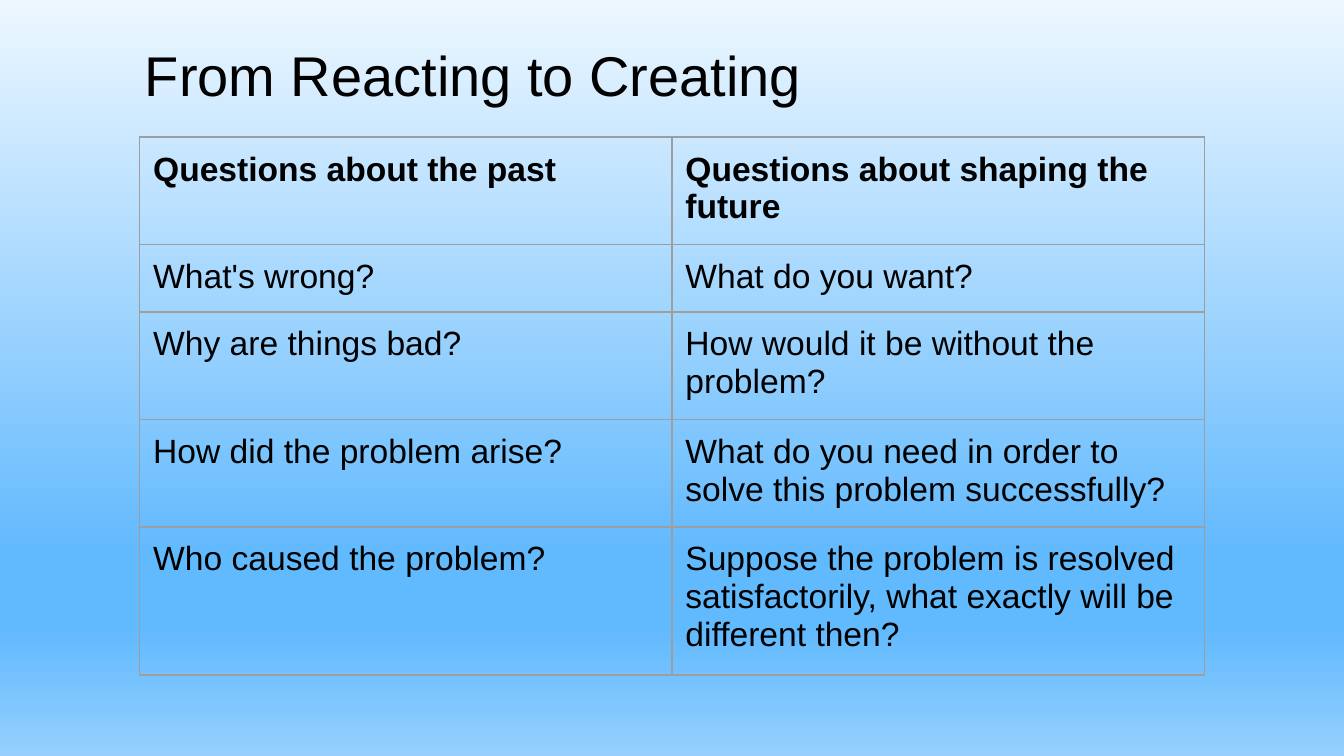
from copy import deepcopy

from lxml import etree
from pptx import Presentation
from pptx.dml.color import RGBColor
from pptx.enum.text import MSO_ANCHOR
from pptx.oxml.ns import qn
from pptx.util import Inches, Pt

TOP = MSO_ANCHOR.TOP
FONT = "Arial"
COLORS = {"text": "000000", "border": "9E9E9E",
          "pale": "EDF7FF", "sky": "61B9FE", "light": "95D0FE"}
BACKGROUND_STOPS = [(0, "pale"), (0.74, "sky"), (0.83, "sky"), (1, "light")]
INSET = Inches(0.1)
BORDER_WIDTH = Pt(0.75)
ROW_HEIGHT = Inches(0.42)  # minimum; rows grow with their text
# Past question, future question
QUESTIONS = [
    ("Questions about the past", "Questions about shaping the future"),
    ("What's wrong?", "What do you want?"),
    ("Why are things bad?", "How would it be without the problem?"),
    ("How did the problem arise?",
     "What do you need in order to solve this problem successfully?"),
    ("Who caused the problem?",
     "Suppose the problem is resolved satisfactorily, "
     "what exactly will be different then?"),
]


def rgb(name):
    return RGBColor.from_string(COLORS[name])


def set_font(paragraph, size, bold=False):
    font = paragraph.font
    font.name, font.size, font.bold = FONT, Pt(size), bold
    font.color.rgb = rgb("text")


def set_margins(box):
    box.margin_left = box.margin_right = INSET
    box.margin_top = box.margin_bottom = INSET


def paint_background(slide):
    fill = slide.background.fill
    fill.gradient()
    fill.gradient_angle = 270
    # A new gradient has two stops; add the missing ones
    stop_list = next(slide.element.iter(qn("a:gsLst")))
    while len(stop_list) < len(BACKGROUND_STOPS):
        stop_list.append(deepcopy(stop_list[0]))
    for stop, (position, color) in zip(fill.gradient_stops, BACKGROUND_STOPS):
        stop.position = position
        stop.color.rgb = rgb(color)


def add_title(slide, text, left, top, width, height):
    title = slide.shapes.add_textbox(
        Inches(left), Inches(top), Inches(width), Inches(height))
    frame = title.text_frame
    frame.word_wrap = True
    frame.vertical_anchor = TOP
    set_margins(frame)
    paragraph = frame.paragraphs[0]
    paragraph.text = text
    paragraph.line_spacing = 1.15
    set_font(paragraph, 30)


def add_borders(cell):
    properties = cell._tc.get_or_add_tcPr()
    for index, side in enumerate(("lnL", "lnR", "lnT", "lnB")):
        line = etree.Element(qn(f"a:{side}"), w=str(BORDER_WIDTH))
        fill = etree.SubElement(line, qn("a:solidFill"))
        etree.SubElement(fill, qn("a:srgbClr"), val=COLORS["border"])
        properties.insert(index, line)


def add_question_table(slide, left, top, width, height):
    table_frame = slide.shapes.add_table(
        len(QUESTIONS), 2,
        Inches(left), Inches(top), Inches(width), Inches(height))
    table = table_frame.table
    table.first_row = table.horz_banding = False
    for row_index, questions in enumerate(QUESTIONS):
        table.rows[row_index].height = ROW_HEIGHT
        for column_index, text in enumerate(questions):
            cell = table.cell(row_index, column_index)
            cell.text = text
            cell.vertical_anchor = TOP
            set_margins(cell)
            cell.fill.background()
            add_borders(cell)
            set_font(cell.text_frame.paragraphs[0], 18, bold=row_index == 0)
    # Row heights resize the frame, so its height is set last
    table_frame.height = Inches(height)


def main():
    presentation = Presentation()
    presentation.slide_width = Inches(10)
    presentation.slide_height = presentation.slide_width * 9 // 16
    slide = presentation.slides.add_slide(presentation.slide_layouts[6])
    paint_background(slide)
    add_title(slide, "From Reacting to Creating", 0.98, 0.13, 6.43, 0.71)
    add_question_table(slide, 1.04, 1.02, 7.92, 4)
    presentation.save("out.pptx")


if __name__ == "__main__":
    main()
